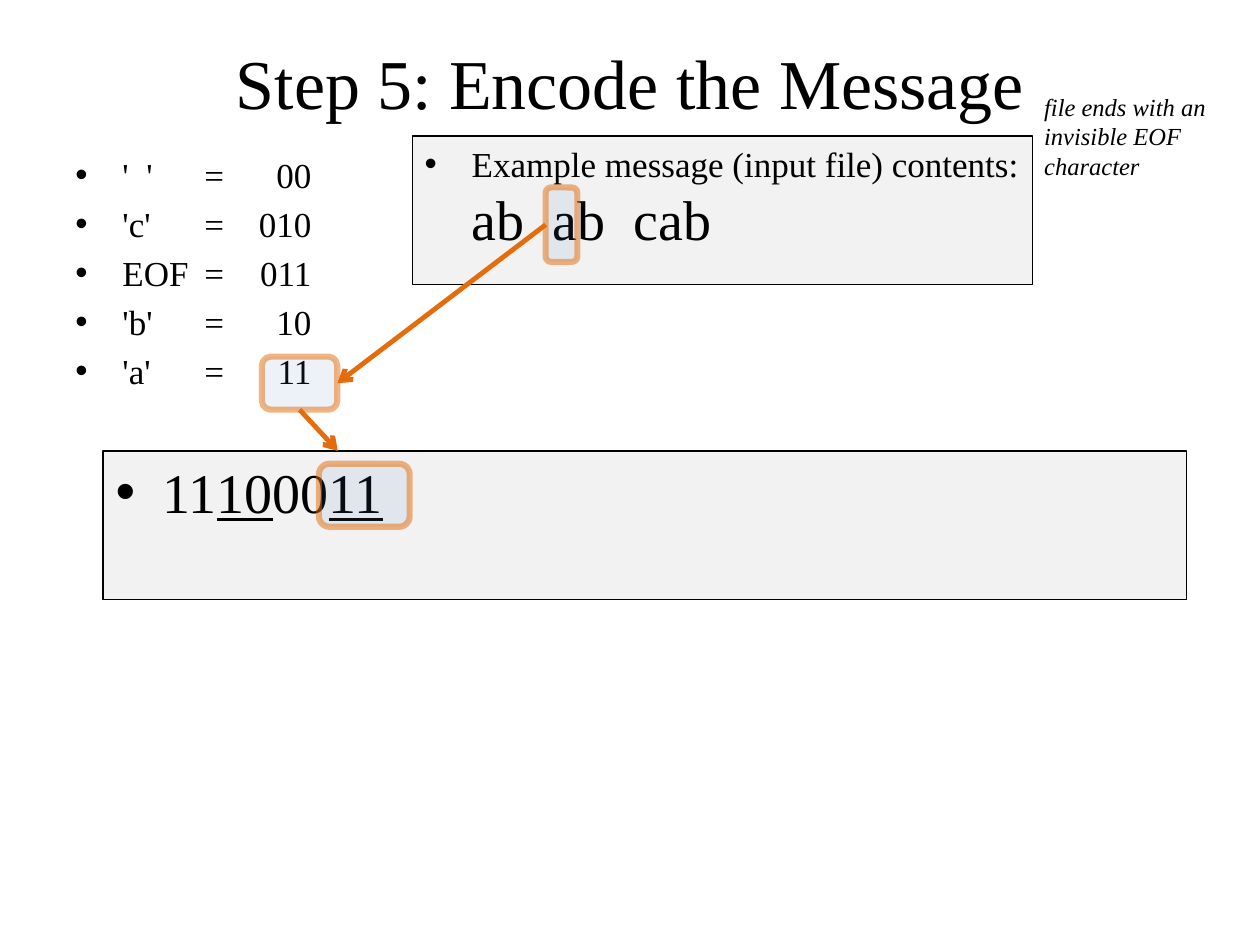
from pptx import Presentation
from pptx.dml.color import RGBColor
from pptx.enum.shapes import MSO_CONNECTOR as Connector, MSO_SHAPE as Shape
from pptx.enum.text import MSO_ANCHOR as Anchor, PP_ALIGN as Align
from pptx.oxml import parse_xml
from pptx.oxml.ns import nsdecls, qn
from pptx.util import Cm, Pt

BLACK = RGBColor(0x00, 0x00, 0x00)
PANEL_GRAY = RGBColor(0xF2, 0xF2, 0xF2)
BLUE = RGBColor(0x4F, 0x81, 0xBD)
ORANGE = RGBColor(0xE4, 0x6C, 0x0A)
FONT = "Times New Roman"


def make_element(xml):
    tag, _, rest = xml.partition(">")
    return parse_xml(f"{tag} {nsdecls('a')}>{rest}")


def write_text(shape, paragraphs, size=20, italic=False, bullet=False, tabs="",
               align=Align.LEFT, anchor=Anchor.TOP):
    """Each paragraph is a list of runs: (text, format overrides)."""
    frame = shape.text_frame
    frame.word_wrap = True
    frame.vertical_anchor = anchor
    for index, runs in enumerate(paragraphs):
        paragraph = frame.add_paragraph() if index else frame.paragraphs[0]
        paragraph.alignment = align
        if bullet:
            properties = paragraph._p.get_or_add_pPr()
            properties.set("marL", str(Cm(0.95)))
            properties.set("indent", str(Cm(-0.95)))
            for xml in ('<a:spcBef><a:spcPct val="20000"/></a:spcBef>',
                        '<a:buFont><a:dummy/></a:buFont>',
                        '<a:buChar><a:dummy/></a:buChar>'):
                element = make_element(xml)
                for dummy in element.findall(qn("a:dummy")):
                    element.remove(dummy)
                if element.tag == qn("a:buFont"):
                    element.set("typeface", "Arial")
                elif element.tag == qn("a:buChar"):
                    element.set("char", "•")
                properties.append(element)
            if tabs:
                properties.append(make_element(f"<a:tabLst>{tabs}</a:tabLst>"))
        for text, overrides in runs:
            if text == "\n":
                paragraph.add_line_break()
                continue
            run = paragraph.add_run()
            run.text = text
            run.font.name = FONT
            run.font.size = Pt(overrides.get("size", size))
            run.font.italic = italic
            run.font.underline = overrides.get("underline", False)
            run.font.color.rgb = BLACK


presentation = Presentation()
presentation.slide_width, presentation.slide_height = Cm(25.4), Cm(19.05)
slide = presentation.slides.add_slide(presentation.slide_layouts[6])
shapes = slide.shapes

# Title
title = shapes.add_textbox(Cm(1.27), Cm(0.76), Cm(22.86), Cm(1.78))
write_text(title, [[("Step 5: Encode the Message", {})]], size=40,
           align=Align.CENTER, anchor=Anchor.MIDDLE)

# Code table: symbol, equals sign, right-aligned code
codes = [("'  '", "00"), ("'c'", "010"), ("EOF", "011"), ("'b'", "10"), ("'a'", "11")]
code_list = shapes.add_textbox(Cm(1.27), Cm(2.97), Cm(6.38), Cm(5.72))
write_text(code_list, [[(f"{symbol}\t=\t{code}", {})] for symbol, code in codes],
           bullet=True, tabs=f'<a:tab pos="{Cm(2.6)}" algn="l"/>'
                             f'<a:tab pos="{Cm(4.76)}" algn="r"/>')

# Panels, highlights and arrows, from back to front
panels = {
    "message": (8.31, 2.74, 12.5, 3.0),
    "output": (2.08, 9.09, 21.84, 3.0),
}
highlights = {
    "space": (11.0, 3.78, 0.64, 1.5),
    "code": (5.28, 7.19, 1.52, 1.07),
    "encoded": (6.43, 9.35, 1.83, 1.27),
}
arrows = {
    "space to code": (11.0, 4.52, 6.81, 7.72),
    "code to output": (6.05, 8.26, 6.81, 9.09),
}
drawn = {}
for name in ("message", "space to code", "space", "output",
             "code to output", "code", "encoded"):
    if name in arrows:
        item = shapes.add_connector(Connector.STRAIGHT, *map(Cm, arrows[name]))
        item.line.color.rgb = ORANGE
        item.line.width = Pt(2.75)
        tail = make_element("<a:tailEnd></a:tailEnd>")
        tail.set("type", "arrow")
        item.line._get_or_add_ln().append(tail)
        item._element.spPr.append(make_element("<a:effectLst></a:effectLst>"))
    else:
        is_panel = name in panels
        item = shapes.add_shape(Shape.RECTANGLE if is_panel else Shape.ROUNDED_RECTANGLE,
                                *map(Cm, (panels if is_panel else highlights)[name]))
        item.shadow.inherit = False
        item.fill.solid()
        item.fill.fore_color.rgb = PANEL_GRAY if is_panel else BLUE
        item.line.color.rgb = BLACK if is_panel else ORANGE
        item.line.width = Pt(0.75 if is_panel else 3.5)
        if not is_panel:
            colors = item._element.spPr.iter(qn("a:srgbClr"))
            for color, opacity in zip(list(colors), (10000, 50000)):
                alpha = make_element("<a:alpha></a:alpha>")
                alpha.set("val", str(opacity))
                color.append(alpha)
    drawn[name] = item

# Join the arrows to the highlights
drawn["space to code"].begin_connect(drawn["space"], 1)
drawn["space to code"].end_connect(drawn["code"], 3)
drawn["code to output"].begin_connect(drawn["code"], 2)

# Panel text and side note
write_text(drawn["message"], [[("Example message (input file) contents:", {}), ("\n", {}),
                               ("ab  ab  cab", {"size": 32})]], bullet=True)
write_text(drawn["output"], [[("11", {}), ("10", {"underline": True}),
                              ("00", {}), ("11", {"underline": True})]],
           size=32, bullet=True)
note = shapes.add_textbox(Cm(20.8), Cm(1.73), Cm(4.01), Cm(2.06))
write_text(note, [[("file ends with an invisible EOF character", {})]],
           size=14, italic=True)

presentation.save("out.pptx")
